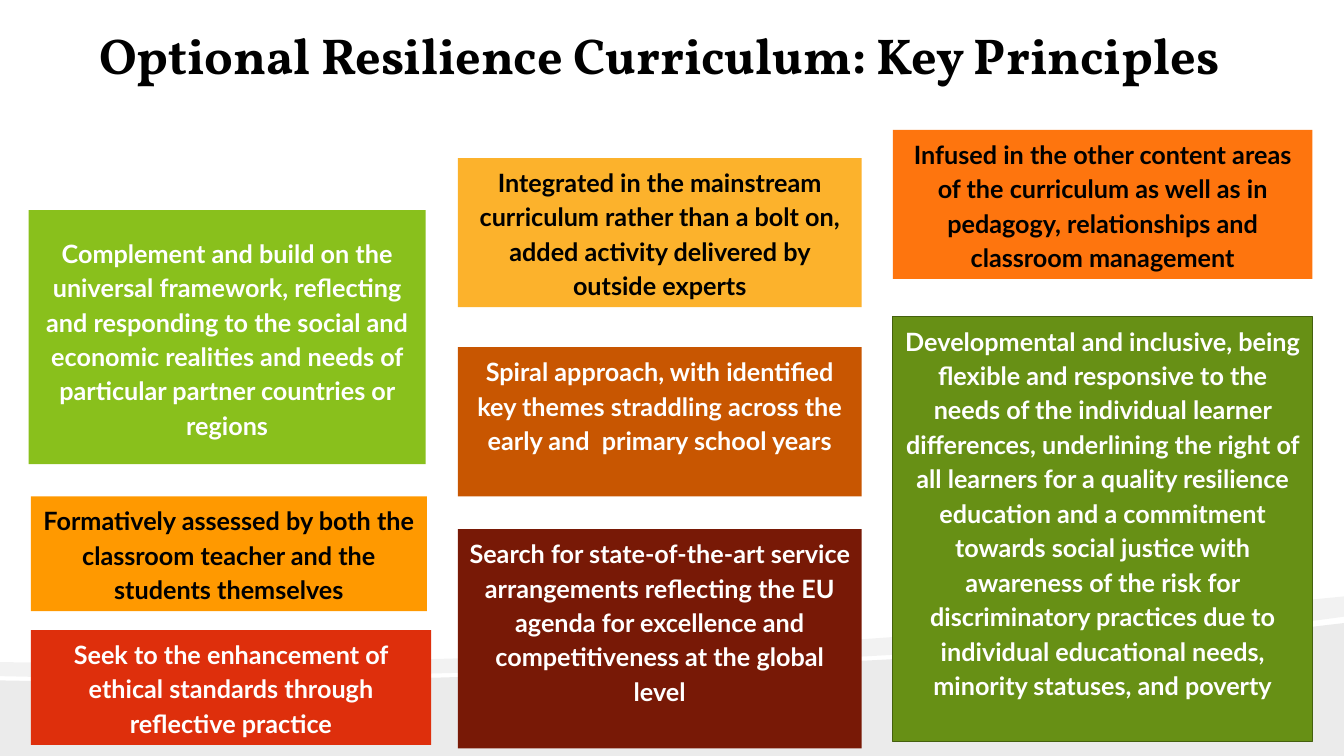
from lxml.etree import SubElement
from pptx import Presentation
from pptx.dml.color import RGBColor
from pptx.enum.shapes import MSO_SHAPE
from pptx.enum.text import MSO_ANCHOR, MSO_AUTO_SIZE, PP_ALIGN
from pptx.oxml.ns import qn
from pptx.util import Pt

BLACK = RGBColor(0x00, 0x00, 0x00)
WHITE = RGBColor(0xFF, 0xFF, 0xFF)
LIME = RGBColor(0x89, 0xC0, 0x1C)
YELLOW = RGBColor(0xFC, 0xB2, 0x2C)
ORANGE = RGBColor(0xFE, 0x75, 0x0E)
AMBER = RGBColor(0xFF, 0x99, 0x00)
RUST = RGBColor(0xC8, 0x56, 0x01)
GREEN = RGBColor(0x67, 0x90, 0x15)
DARK_GREEN = RGBColor(0x44, 0x60, 0x0E)
RED = RGBColor(0xDE, 0x2F, 0x0C)
MAROON = RGBColor(0x78, 0x19, 0x06)

SLIDE_W, SLIDE_H = 960, 540
CURVE_STEPS = 24


def curve(p0, p1, p2, p3):
    """Return points along a cubic Bézier curve, both ends included."""
    points = []
    for i in range(CURVE_STEPS + 1):
        t = i / CURVE_STEPS
        u = 1 - t
        weights = (u**3, 3 * u * u * t, 3 * u * t * t, t**3)
        points.append(tuple(
            sum(w * c for w, c in zip(weights, axis))
            for axis in zip(p0, p1, p2, p3)))
    return points


class SlideBuilder:
    title_font = "Vollkorn"
    title_size = Pt(36)
    body_font = "Lato"
    body_size = Pt(18)
    line_spacing = 1.14

    def __init__(self, prs):
        self.slide = prs.slides.add_slide(prs.slide_layouts[5])

    def style(self, p, font, size, color):
        p.alignment = PP_ALIGN.CENTER
        p.font.name = font
        p.font.size = size
        p.font.bold = True
        p.font.color.rgb = color

    def title(self, text, left, top, width, height):
        sp = self.slide.shapes.title
        sp.left, sp.top, sp.width, sp.height = map(Pt, (left, top, width, height))
        tf = sp.text_frame
        tf.text = text
        tf.auto_size = MSO_AUTO_SIZE.NONE
        tf.vertical_anchor = MSO_ANCHOR.TOP
        self.style(tf.paragraphs[0], self.title_font, self.title_size, BLACK)

    def wave(self, points, opacity):
        """Draw a translucent black outline; opacity is in percent."""
        points = [(Pt(x), Pt(y)) for x, y in points]
        builder = self.slide.shapes.build_freeform(*points[0])
        builder.add_line_segments(points[1:], close=True)
        sp = builder.convert_to_shape()
        sp.shadow.inherit = False
        sp.line.fill.background()
        sp.fill.solid()
        sp.fill.fore_color.rgb = BLACK
        color = sp.fill._xPr.find(qn("a:solidFill"))[0]
        SubElement(color, qn("a:alpha"), val=str(opacity * 1000))

    def box(self, text, left, top, width, height, fill, color=WHITE,
            anchor=MSO_ANCHOR.TOP, outline=None):
        sp = self.slide.shapes.add_shape(
            MSO_SHAPE.RECTANGLE, *map(Pt, (left, top, width, height)))
        sp.shadow.inherit = False
        sp.fill.solid()
        sp.fill.fore_color.rgb = fill
        if outline is None:
            sp.line.fill.background()
        else:
            sp.line.color.rgb = outline
            sp.line.width = Pt(0.75)
        tf = sp.text_frame
        tf.word_wrap = True
        tf.vertical_anchor = anchor
        p = tf.paragraphs[0]
        p.text = text
        p.line_spacing = self.line_spacing
        self.style(p, self.body_font, self.body_size, color)


def main():
    prs = Presentation()
    prs.slide_width, prs.slide_height = Pt(SLIDE_W), Pt(SLIDE_H)
    s = SlideBuilder(prs)

    s.wave([(SLIDE_W, SLIDE_H), (0, SLIDE_H)]
           + curve((0, 486), (253.5, 492), (750, 471.5), (SLIDE_W, 445)), 8)
    s.wave(curve((SLIDE_W, 440.5), (903.5, 448.5), (827.5, 456), (741, 461.5))
           + curve((741, 461.5), (502.5, 477.5), (186, 487.5), (0, 483))
           + curve((0, 473), (469.5, 476.5), (699, 451.5), (SLIDE_W, 426)), 5)

    s.title("Optional Resilience Curriculum: Key Principles", 57, 13.5, 828, 104.5)

    # Left column
    s.box("Complement and build on the universal framework, reflecting and "
          "responding to the social and economic realities and needs of "
          "particular partner countries or regions",
          20.5, 150, 283.5, 181.5, LIME, anchor=MSO_ANCHOR.MIDDLE)
    s.box("Formatively assessed by both the classroom teacher and the students "
          "themselves", 22, 354.5, 283, 82, AMBER, BLACK)
    s.box("Seek to the enhancement of ethical standards through reflective "
          "practice", 22, 450, 286, 82, RED)

    # Middle column
    middle, middle_w = 327, 288.5
    s.box("Integrated in the mainstream curriculum rather than a bolt on, added "
          "activity delivered by outside experts",
          middle, 113, middle_w, 106.5, YELLOW, BLACK)
    s.box("Spiral approach, with identified key themes straddling across the "
          "early and  primary school years",
          middle, 248, middle_w, 106.5, RUST)
    s.box("Search for state-of-the-art service arrangements reflecting the EU "
          "agenda for excellence and competitiveness at the global level",
          middle, 378, middle_w, 156.5, MAROON)

    # Right column
    right, right_w = 637.75, 299.75
    s.box("Infused in the other content areas of the curriculum as well as in "
          "pedagogy, relationships and classroom management",
          right, 92.75, right_w, 106.5, ORANGE, BLACK)
    s.box("Developmental and inclusive, being flexible and responsive to the "
          "needs of the individual learner differences, underlining the right "
          "of all learners for a quality resilience education and a commitment "
          "towards social justice with awareness of the risk for discriminatory "
          "practices due to individual educational needs, minority statuses, "
          "and poverty",
          right, 226.25, right_w, 303.25, GREEN, outline=DARK_GREEN)

    prs.save("out.pptx")


if __name__ == "__main__":
    main()
